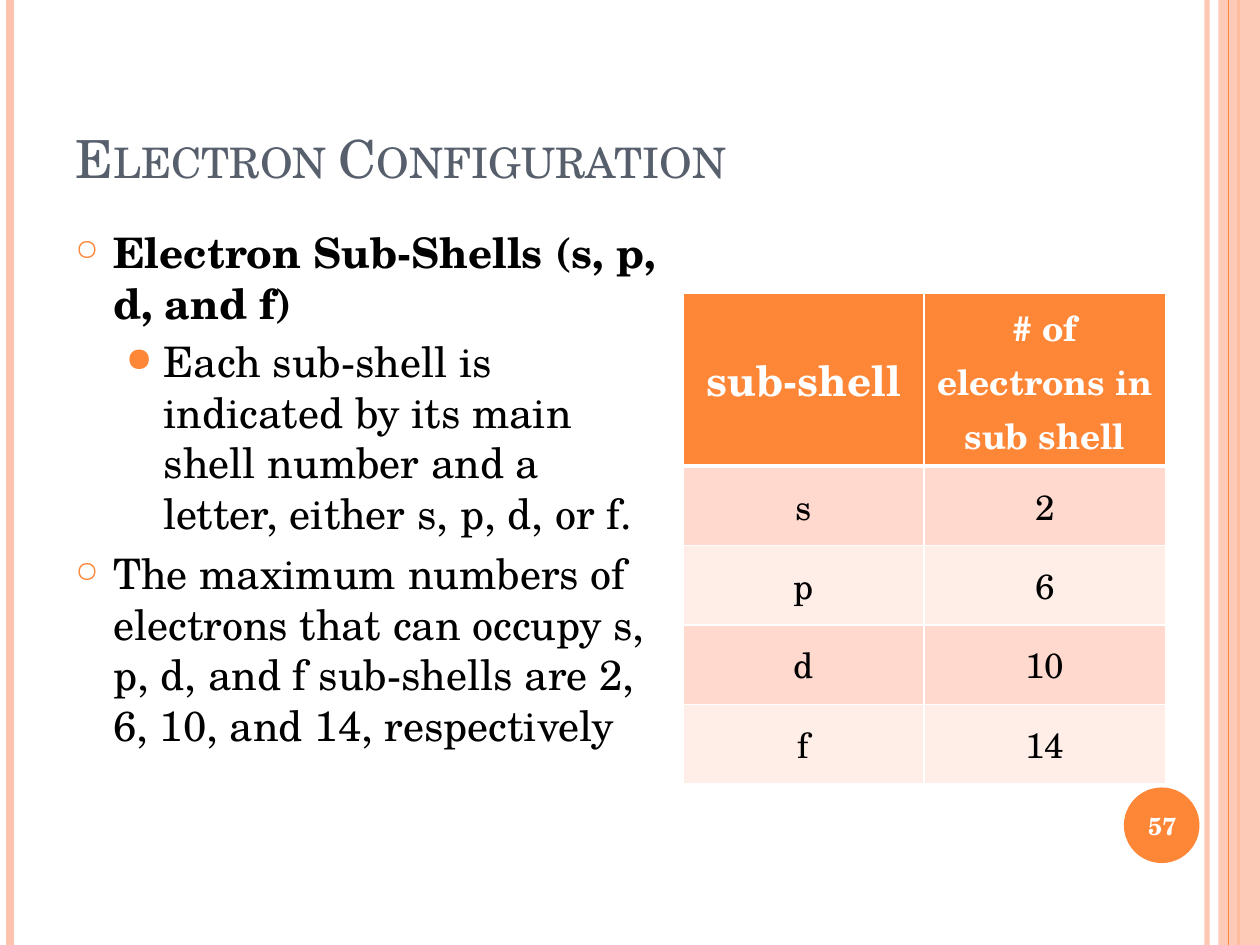
from lxml.etree import SubElement
from pptx import Presentation
from pptx.dml.color import RGBColor
from pptx.enum.shapes import MSO_CONNECTOR, MSO_SHAPE
from pptx.enum.text import MSO_ANCHOR, PP_ALIGN
from pptx.oxml.ns import qn
from pptx.util import Inches, Pt

FONT = "TeX Gyre Schola"
ORANGE, PEACH, WHITE, BLACK, SLATE = "FE8637", "FEC3AE", "FFFFFF", "000000", "575F6D"
BANDS = ["FFD9CE", "FFEDE8"]

TITLE = "Electron Configuration"
PAGE_NUMBER = "57"
POINTS = [
    (0, True, "Electron Sub-Shells (s, p, d, and f)"),
    (1, False, "Each sub-shell is indicated by its main shell number and a letter, either s, p, d, or f."),
    (0, False, "The maximum numbers of electrons that can occupy s, p, d, and f sub-shells are 2, 6, 10, and 14, respectively"),
]
LEVELS = [
    {"margin": 0.3, "before": 6, "bullet": "○", "percent": 70},
    {"margin": 0.7, "before": 4.8, "bullet": "●", "percent": 80},
]
ROWS = [
    ("sub-shell", "# of electrons in sub shell"),
    ("s", "2"),
    ("p", "6"),
    ("d", "10"),
    ("f", "14"),
]
LEFT_RULES = [(9.58, PEACH, 3, 93), (0.08, PEACH, 4.5, 100), (9.83, ORANGE, 1.5, 100)]
RIGHT_RULES = [(9.75, ORANGE, 0.75, 100)]


def color(value):
    return RGBColor.from_string(value)


def add_child(parent, tag, **attributes):
    return SubElement(parent, qn(tag), attributes)


def set_opacity(properties, percent):
    shade = next(properties.iter(qn("a:srgbClr")))
    add_child(shade, "a:alpha", val=str(percent * 1000))


def add_rules(page, rules):
    for x, shade, width, opacity in rules:
        rule = page.shapes.add_connector(
            MSO_CONNECTOR.STRAIGHT, Inches(x), Inches(0), Inches(x), Inches(7.5))
        rule.line.color.rgb = color(shade)
        rule.line.width = Pt(width)
        if opacity < 100:
            set_opacity(rule.line._ln, opacity)
        add_child(rule._element.spPr, "a:effectLst")


def add_shape(page, kind, area, shade):
    shape = page.shapes.add_shape(kind, *map(Inches, area))
    shape.shadow.inherit = False
    shape.fill.solid()
    shape.fill.fore_color.rgb = color(shade)
    shape.line.fill.background()
    return shape


def add_text_box(page, area, anchor):
    box = page.shapes.add_textbox(*map(Inches, area))
    box.text_frame.word_wrap = True
    box.text_frame.vertical_anchor = anchor
    return box.text_frame


def write(para, text, size, shade, bold=False):
    para.text = text
    span = para.runs[0]
    span.font.name = FONT
    span.font.size = Pt(size)
    span.font.bold = bold
    span.font.color.rgb = color(shade)
    return span


def set_bullet(para, level):
    para.space_before = Pt(level["before"])
    properties = para._p.get_or_add_pPr()
    properties.set("marL", str(Inches(level["margin"])))
    properties.set("indent", str(Inches(-0.3)))
    add_child(add_child(properties, "a:buClr"), "a:srgbClr", val=ORANGE)
    add_child(properties, "a:buSzPct", val=str(level["percent"] * 1000))
    add_child(properties, "a:buChar", char=level["bullet"])


def set_borders(cell, bottom, top):
    properties = cell._tc.get_or_add_tcPr()
    for tag, width in (("a:lnL", 1), ("a:lnR", 1), ("a:lnT", top), ("a:lnB", bottom)):
        line = add_child(properties, tag, w=str(Pt(width)))
        add_child(add_child(line, "a:solidFill"), "a:srgbClr", val=WHITE)


def add_shell_table(page):
    heights = [1.37] + [0.63] * (len(ROWS) - 1)
    area = (5.42, 2.33, 3.83, sum(heights))
    table = page.shapes.add_table(len(ROWS), len(ROWS[0]), *map(Inches, area)).table
    for row_index, (texts, height) in enumerate(zip(ROWS, heights)):
        table.rows[row_index].height = Inches(height)
        header = row_index == 0
        for column_index, text in enumerate(texts):
            cell = table.cell(row_index, column_index)
            set_borders(cell, 3 if header else 1, 3 if row_index == 1 else 1)
            cell.fill.solid()
            cell.fill.fore_color.rgb = color(ORANGE if header else BANDS[(row_index - 1) % 2])
            cell.vertical_anchor = MSO_ANCHOR.MIDDLE
            para = cell.text_frame.paragraphs[0]
            para.alignment = PP_ALIGN.CENTER
            size = 24 if header and column_index == 0 else 20
            write(para, text, size, WHITE if header else BLACK, header)


def main():
    """Build the electron configuration slide."""
    deck = Presentation()
    deck.slide_width, deck.slide_height = Inches(10), Inches(7.5)
    page = deck.slides.add_slide(deck.slide_layouts[6])

    add_rules(page, LEFT_RULES)
    band = add_shape(page, MSO_SHAPE.RECTANGLE, (9.67, 0, 0.33, 7.5), PEACH)
    set_opacity(band._element.spPr, 87)
    add_rules(page, RIGHT_RULES)
    add_shape(page, MSO_SHAPE.OVAL, (8.92, 6.25, 0.6, 0.6), ORANGE)

    title = add_text_box(page, (0.5, 0.3, 8.17, 1.25), MSO_ANCHOR.BOTTOM)
    span = write(title.paragraphs[0], TITLE, 30, SLATE)
    span.font._element.set("cap", "small")

    body = add_text_box(page, (0.5, 1.75, 4.83, 5.17), MSO_ANCHOR.TOP)
    for index, (level, bold, text) in enumerate(POINTS):
        para = body.add_paragraph() if index else body.paragraphs[0]
        para.level = level
        set_bullet(para, LEVELS[level])
        write(para, text, 24, BLACK, bold)

    add_shell_table(page)

    number = add_text_box(page, (8.89, 6.27, 0.67, 0.57), MSO_ANCHOR.MIDDLE)
    number.paragraphs[0].alignment = PP_ALIGN.CENTER
    write(number.paragraphs[0], PAGE_NUMBER, 14, WHITE, True)

    deck.save("out.pptx")


if __name__ == "__main__":
    main()
